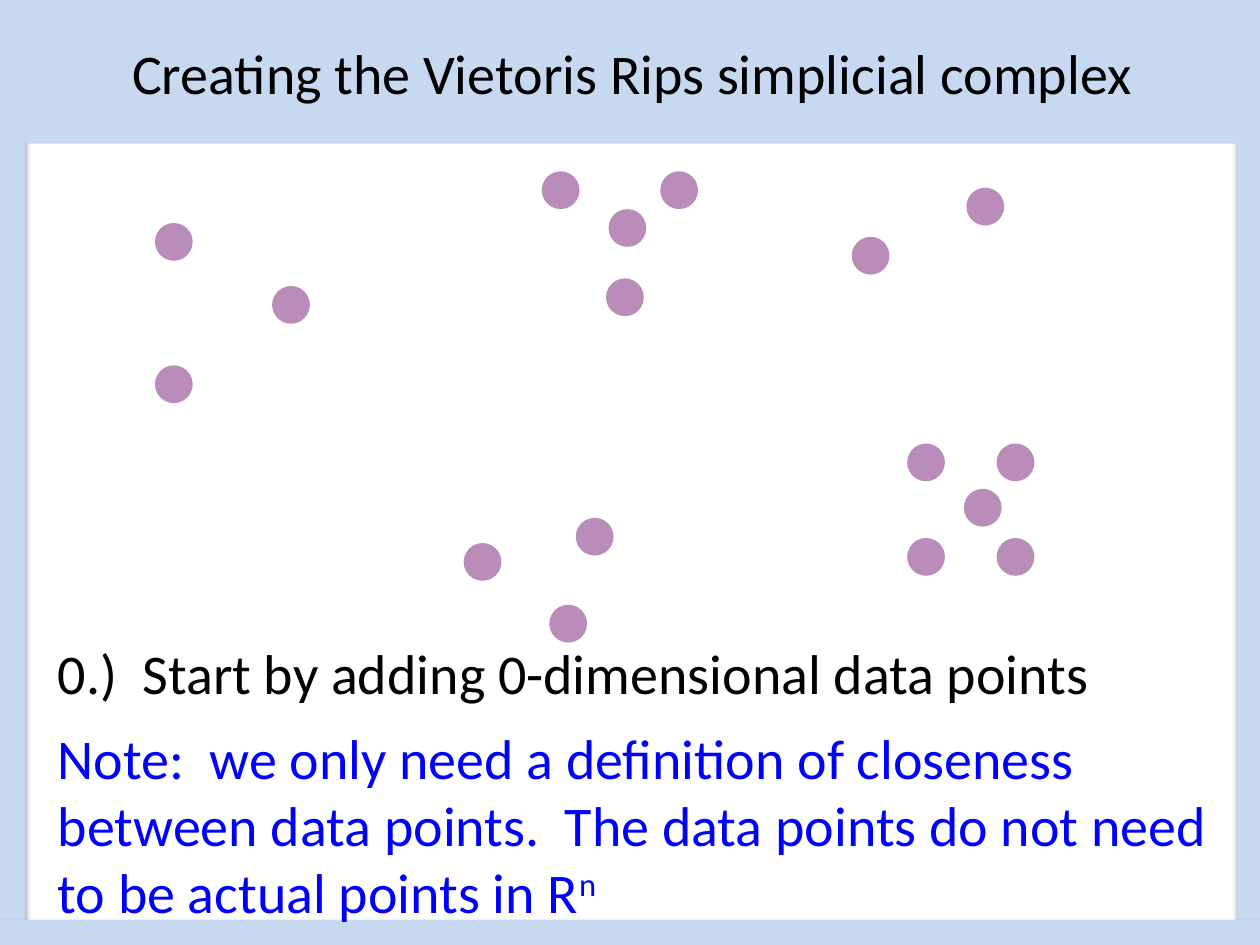
from dataclasses import dataclass

from lxml import etree
from pptx import Presentation
from pptx.dml.color import RGBColor
from pptx.enum import shapes, text
from pptx.oxml import ns
from pptx.util import Inches, Pt


@dataclass(frozen=True)
class Theme:
    pale: str = "C6D9F1"
    dot: str = "660066"
    ink: str = "000000"
    note: str = "0000FF"
    font: str = "Calibri"
    size: int = 32
    gap: float = 9.75


THEME = Theme()
KIND = shapes.MSO_SHAPE
DOT = 0.3

# Left and top of each data point, by cluster, within the plot
POINTS = [
    (1.23, 1.76), (2.16, 1.13), (1.23, 0.63),
    (4.3, 0.22), (5.24, 0.22), (4.83, 0.52), (4.81, 1.07),
    (6.76, 0.74), (7.67, 0.35),
    (3.68, 3.17), (4.57, 2.97), (4.36, 3.66),
    (7.2, 2.38), (7.91, 2.38), (7.65, 2.74), (7.2, 3.13), (7.91, 3.13),
]


def add_mark(slide, kind, box, color):
    mark = slide.shapes.add_shape(kind, *map(Inches, box))
    mark.shadow.inherit = False
    mark.fill.solid()
    mark.fill.fore_color.rgb = RGBColor.from_string(color)
    mark.line.fill.background()
    return mark


def add_child(node, tag, **attrs):
    return etree.SubElement(node, ns.qn(tag), attrs)


def fade(mark, share):
    color = mark.fill._xPr.find(".//" + ns.qn("a:srgbClr"))
    add_child(color, "a:alpha", val=str(share * 1000))


def cast(mark):
    """Give the mark a soft shadow straight below it."""
    effects = mark._element.spPr.find(ns.qn("a:effectLst"))
    outer = add_child(effects, "a:outerShdw", blurRad=str(Pt(3.1)),
                      dist=str(Pt(1.8)), dir="5400000", rotWithShape="0")
    color = add_child(outer, "a:srgbClr", val=THEME.ink)
    add_child(color, "a:alpha", val="35000")


def add_text(para, words, color=THEME.ink, align=None, before=0, base=0):
    run = para.add_run()
    run.text = words
    run.font.name = THEME.font
    run.font.size = Pt(THEME.size)
    run.font.color.rgb = RGBColor.from_string(color)
    if align is not None:
        para.alignment = align
    if before:
        para.space_before = Pt(before)
    if base:
        run.font._element.set("baseline", str(base * 1000))


def draw_frame(slide, box, edge=0.2):
    x, y, w, h = box
    bars = [
        ((x, y, edge, h), True),
        ((x + w - edge + 0.02, y, edge - 0.02, h), True),
        ((x, y, w, edge), False),
        ((x, y + h - edge, w, edge), True),
    ]
    for bar, shade in bars:
        mark = add_mark(slide, KIND.RECTANGLE, bar, THEME.pale)
        if shade:
            cast(mark)


def draw_notes(slide, box):
    frame = slide.shapes.add_textbox(*map(Inches, box)).text_frame
    frame.word_wrap = True
    add_text(frame.paragraphs[0],
             "0.)  Start by adding 0-dimensional data points")
    note = frame.add_paragraph()
    add_text(note, "Note:  we only need a definition of closeness between "
             "data points.  The data points do not need to be actual "
             "points in R", color=THEME.note, before=THEME.gap)
    add_text(note, "n", color=THEME.note, base=30)


def draw_points(slide, box):
    x, y = box[:2]
    for left, top in POINTS:
        dot = add_mark(slide, KIND.OVAL, (x + left, y + top, DOT, DOT),
                       THEME.dot)
        fade(dot, 45)


def draw_title(slide, box):
    frame = add_mark(slide, KIND.RECTANGLE, box, THEME.pale).text_frame
    frame.word_wrap = True
    frame.vertical_anchor = text.MSO_ANCHOR.MIDDLE
    add_text(frame.paragraphs[0],
             "Creating the Vietoris Rips simplicial complex",
             align=text.PP_ALIGN.CENTER)


def main():
    deck = Presentation()
    deck.slide_width, deck.slide_height = Inches(10), Inches(7.5)
    slide = deck.slides.add_slide(deck.slide_layouts[6])

    # Border, then wording, data points and the title band on top
    draw_frame(slide, (0, 0, 10, 7.5))
    draw_notes(slide, (0.36, 5.02, 9.8, 2.39))
    draw_points(slide, (0, 1.14, 10, 3.96))
    draw_title(slide, (0.02, 0, 10, 1.14))

    deck.save("out.pptx")


if __name__ == "__main__":
    main()
